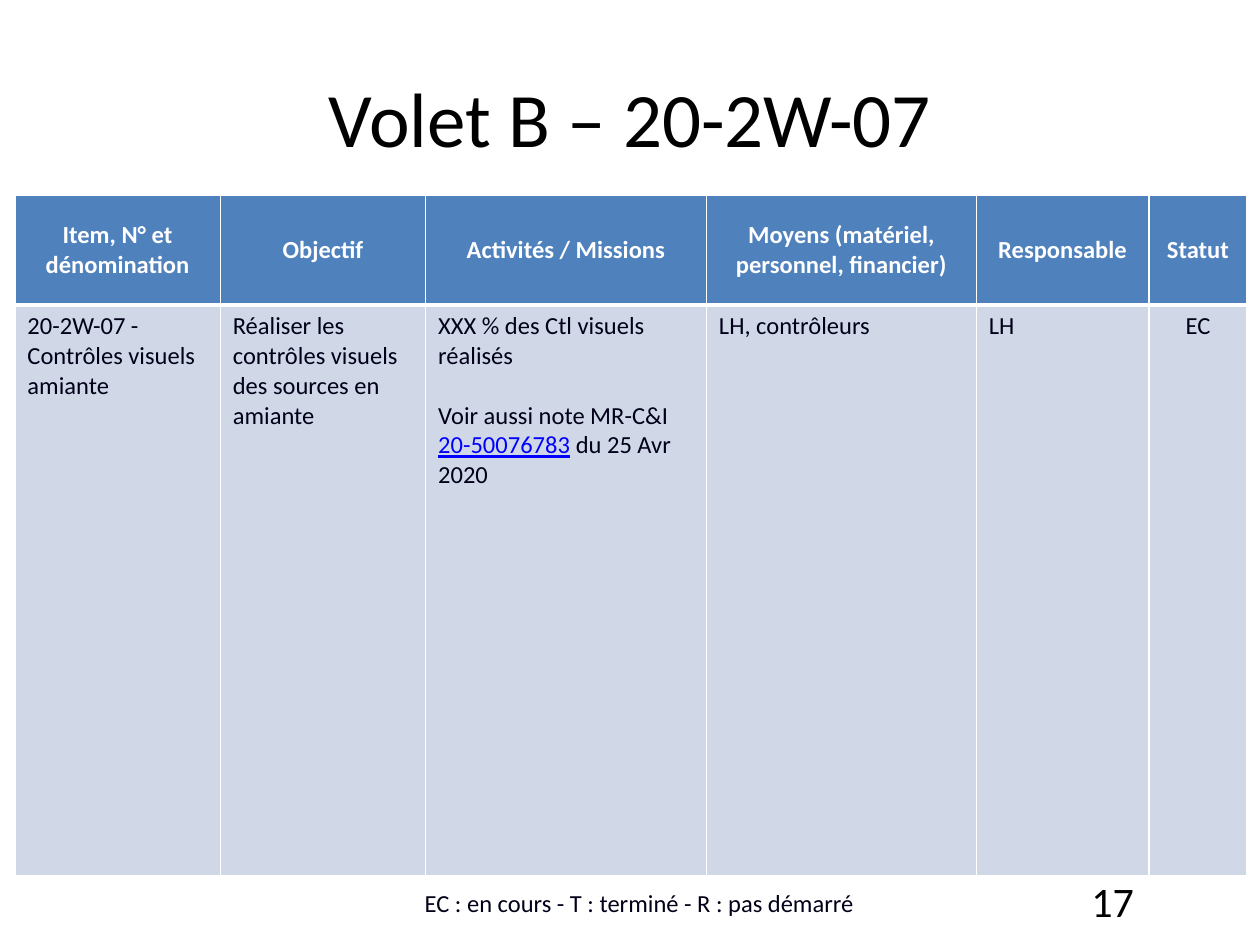
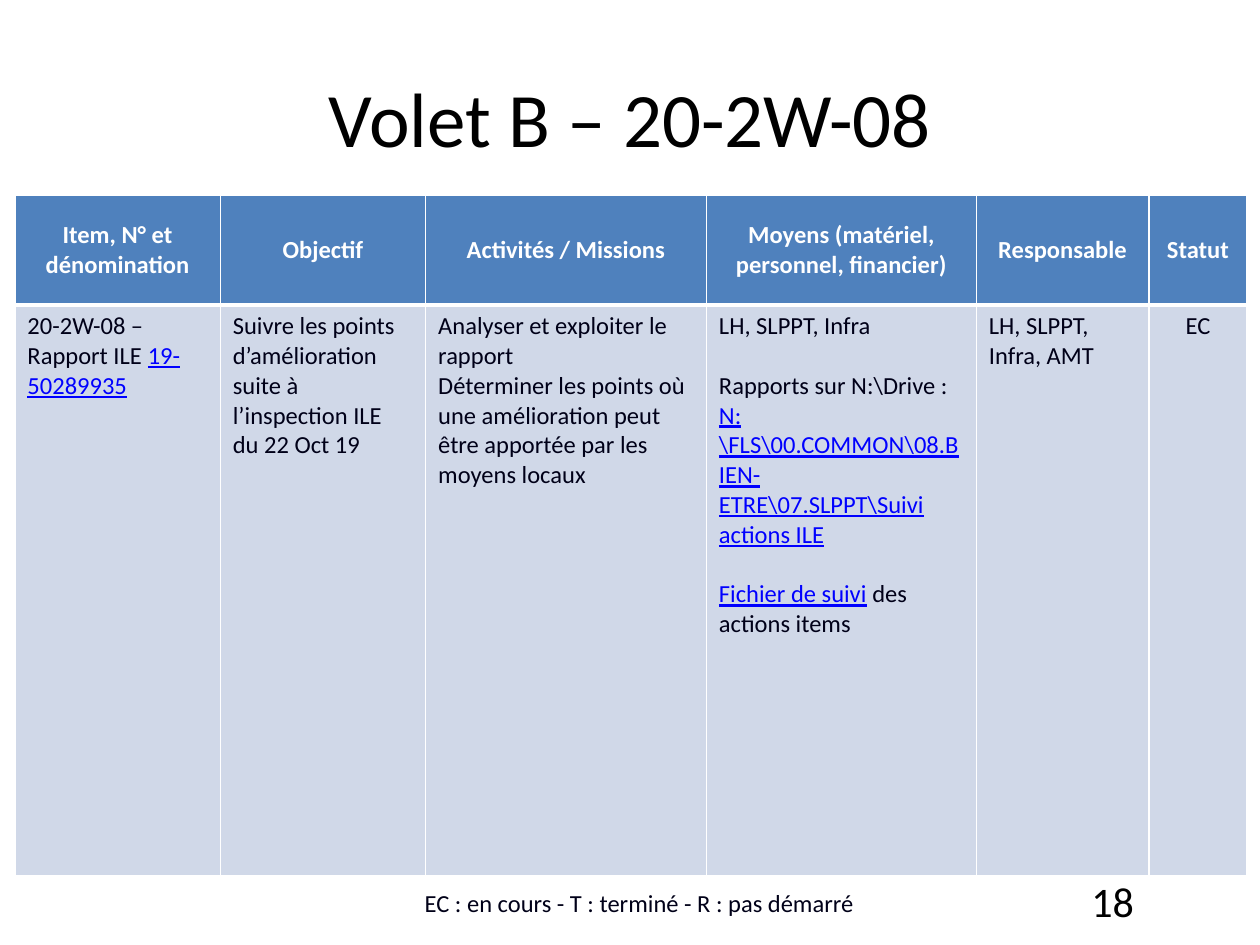
import dataclasses

import lxml.etree
import pptx
import pptx.dml.color
import pptx.enum.text
import pptx.oxml.ns
import pptx.util

Cm = pptx.util.Cm
Pt = pptx.util.Pt
ALIGN = pptx.enum.text.PP_ALIGN
ANCHOR = pptx.enum.text.MSO_ANCHOR

FONT = "Calibri"
TEXT_SIZE = 14
BLANK_LINE = Pt(17)
COLORS = {
    "title": "000000",
    "text": "000018",
    "link": "0000FF",
    "header_text": "FFFFFF",
    "header_fill": "4F81BD",
    "body_fill": "D0D8E8",
    "border": "FFFFFF",
}
TITLE_BOX = (1.27, 0.76, 22.86, 3.18)
TABLE_BOX = (0.3, 3.94, 24.8, 13.72)
NUMBER_BOX = (18.21, 17.65, 4.9, 1.02)
LEGEND_BOX = (5.89, 17.65, 14, 0.97)
HEADER_HEIGHT = 2.21
COLUMNS = [
    ("Item, N° et dénomination", 4.14),
    ("Objectif", 4.14),
    ("Activités / Missions", 5.66),
    ("Moyens (matériel, personnel, financier)", 5.44),
    ("Responsable", 3.48),
    ("Statut", 1.98),
]
LEGEND = "EC : en cours - T : terminé - R : pas démarré"


@dataclasses.dataclass
class Link:
    """Text shown in the link style."""

    text: str


@dataclasses.dataclass
class Line:
    """A paragraph of plain and link pieces, optionally set apart from the one above."""

    pieces: list
    spaced: bool = False


ACTIONS = [
    {
        "title": "Volet B – 20-2W-07",
        "number": "17",
        "cells": [
            [Line(["20-2W-07 - Contrôles visuels amiante"])],
            [Line(["Réaliser les contrôles visuels des sources en amiante"])],
            [
                Line(["XXX % des Ctl visuels réalisés"]),
                Line(["Voir aussi note MR-C&I ", Link("20-50076783"), " du 25 Avr 2020"], True),
            ],
            [Line(["LH, contrôleurs"])],
            [Line(["LH"])],
            [Line(["EC"])],
        ],
    },
    {
        "title": "Volet B – 20-2W-08",
        "number": "18",
        "cells": [
            [Line(["20-2W-08 – Rapport ILE ", Link("19-50289935")])],
            [Line(["Suivre les points d’amélioration suite à l’inspection ILE du 22 Oct 19"])],
            [
                Line(["Analyser et exploiter le rapport"]),
                Line(["Déterminer les points où une amélioration peut être apportée "
                      "par les moyens locaux"]),
            ],
            [
                Line(["LH, SLPPT, Infra"]),
                Line(["Rapports sur N:\\Drive : ",
                      Link("N:\\FLS\\00.COMMON\\08.BIEN-ETRE\\07.SLPPT\\Suivi actions ILE")], True),
                Line([Link("Fichier de suivi"), " des actions items"], True),
            ],
            [Line(["LH, SLPPT, Infra, AMT"])],
            [Line(["EC"])],
        ],
    },
]


def rgb(name):
    """Return the named colour."""
    return pptx.dml.color.RGBColor.from_string(COLORS[name])


def write_lines(text_frame, lines, align, size=TEXT_SIZE, color="text", bold=False):
    """Fill a text frame with lines, run by run."""
    for index, line in enumerate(lines):
        paragraph = text_frame.add_paragraph() if index else text_frame.paragraphs[0]
        paragraph.alignment = align
        if line.spaced:
            paragraph.space_before = BLANK_LINE
        for piece in line.pieces:
            linked = isinstance(piece, Link)
            run = paragraph.add_run()
            run.text = piece.text if linked else piece
            run.font.name = FONT
            run.font.size = Pt(size)
            run.font.bold = bold
            run.font.underline = linked
            run.font.color.rgb = rgb("link" if linked else color)


def style_cell(cell, fill, top, bottom):
    """Give a cell its borders, with top and bottom widths in points, and its fill."""
    properties = cell._tc.get_or_add_tcPr()
    qn = pptx.oxml.ns.qn
    for side, width in (("L", 1), ("R", 1), ("T", top), ("B", bottom)):
        border = lxml.etree.SubElement(properties, qn(f"a:ln{side}"), w=str(Pt(width)))
        solid = lxml.etree.SubElement(border, qn("a:solidFill"))
        lxml.etree.SubElement(solid, qn("a:srgbClr"), val=COLORS["border"])
    cell.fill.solid()
    cell.fill.fore_color.rgb = rgb(fill)


def add_title(slide, box, text):
    """Place and format the title placeholder."""
    title = slide.shapes.title
    title.left, title.top, title.width, title.height = map(Cm, box)
    title.text_frame.vertical_anchor = ANCHOR.MIDDLE
    write_lines(title.text_frame, [Line([text])], ALIGN.CENTER, 44, "title")


def add_action_table(slide, box, cells):
    """Add the header row and the single action row."""
    table = slide.shapes.add_table(2, len(COLUMNS), *map(Cm, box)).table
    table.first_row = table.horz_banding = False
    table.rows[0].height = Cm(HEADER_HEIGHT)
    table.rows[1].height = Cm(box[3] - HEADER_HEIGHT)
    for index, ((heading, width), lines) in enumerate(zip(COLUMNS, cells)):
        table.columns[index].width = Cm(width)
        header, body = table.cell(0, index), table.cell(1, index)
        style_cell(header, "header_fill", top=1, bottom=3)
        style_cell(body, "body_fill", top=3, bottom=1)
        header.vertical_anchor = ANCHOR.MIDDLE
        write_lines(header.text_frame, [Line([heading])], ALIGN.CENTER,
                    color="header_text", bold=True)
        is_status = index == len(COLUMNS) - 1
        write_lines(body.text_frame, lines, ALIGN.CENTER if is_status else ALIGN.LEFT)


def add_label(slide, box, text, align, anchor, size, color):
    """Add a one-line text box."""
    text_frame = slide.shapes.add_textbox(*map(Cm, box)).text_frame
    text_frame.word_wrap = True
    text_frame.vertical_anchor = anchor
    write_lines(text_frame, [Line([text])], align, size, color)


def add_footer(slide, number):
    """Add the slide number and the status legend."""
    add_label(slide, NUMBER_BOX, number, ALIGN.RIGHT, ANCHOR.MIDDLE, 24, "title")
    add_label(slide, LEGEND_BOX, LEGEND, ALIGN.CENTER, ANCHOR.BOTTOM, TEXT_SIZE, "text")


def add_action_slide(presentation, action):
    """Add one action slide with its title, table and footer."""
    slide = presentation.slides.add_slide(presentation.slide_layouts.get_by_name("Title Only"))
    add_title(slide, TITLE_BOX, action["title"])
    add_action_table(slide, TABLE_BOX, action["cells"])
    add_footer(slide, action["number"])


def main():
    """Build and save the presentation."""
    presentation = pptx.Presentation()
    presentation.slide_width = Cm(25.4)
    presentation.slide_height = Cm(19.05)
    for action in ACTIONS:
        add_action_slide(presentation, action)
    presentation.save("out.pptx")


if __name__ == "__main__":
    main()
